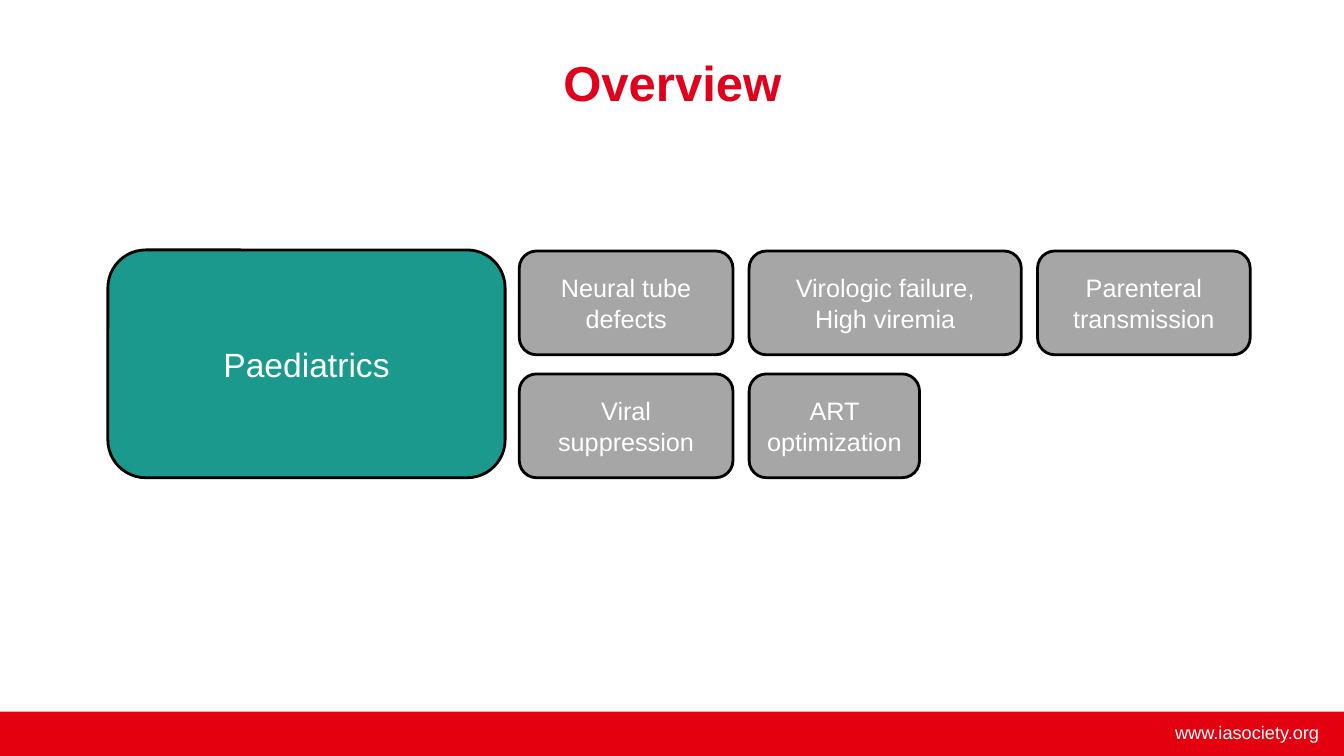
from pptx import Presentation
from pptx.dml.color import RGBColor
from pptx.enum.shapes import MSO_SHAPE
from pptx.enum.text import MSO_ANCHOR, PP_ALIGN
from pptx.util import Inches, Pt

RECT, ROUND = MSO_SHAPE.RECTANGLE, MSO_SHAPE.ROUNDED_RECTANGLE
TOP, MIDDLE = MSO_ANCHOR.TOP, MSO_ANCHOR.MIDDLE
CENTER, RIGHT = PP_ALIGN.CENTER, PP_ALIGN.RIGHT
WHITE, BLACK, BAR, RED = "FFFFFF", "000000", "E3000F", "E0001B"
TEAL, GREY = "1A998C", "A6A6A6"


def color(code):
    return RGBColor.from_string(code)


class Canvas:
    font = "Arial"

    def __init__(self, slide):
        self.slide = slide

    def label(self, shape, lines, size, ink=WHITE, bold=False,
              align=CENTER, anchor=MIDDLE):
        frame = shape.text_frame
        frame.word_wrap = True
        frame.vertical_anchor = anchor
        for i, line in enumerate(lines):
            para = frame.add_paragraph() if i else frame.paragraphs[0]
            para.alignment = align
            run = para.add_run()
            run.text = line
            run.font.name = self.font
            run.font.size = Pt(size)
            run.font.bold = bold
            run.font.color.rgb = color(ink)

    def text(self, box, line, size, **style):
        shape = self.slide.shapes.add_textbox(*map(Inches, box))
        self.label(shape, [line], size, **style)

    def block(self, kind, box, fill, edge=None):
        shape = self.slide.shapes.add_shape(kind, *map(Inches, box))
        shape.shadow.inherit = False
        shape.fill.solid()
        shape.fill.fore_color.rgb = color(fill)
        if edge:
            shape.line.color.rgb = color(edge)
            shape.line.width = Pt(2)
        else:
            shape.line.fill.background()
        return shape

    def card(self, box, fill, lines, size):
        self.label(self.block(ROUND, box, fill, BLACK), lines, size)


def main():
    deck = Presentation()
    deck.slide_width, deck.slide_height = Inches(13.33), Inches(7.5)
    page = Canvas(deck.slides.add_slide(deck.slide_layouts[6]))

    # Footer
    page.block(RECT, (0, 7.06, 13.33, 0.44), BAR)
    page.text((10.43, 7.11, 2.75, 0.32), "www.iasociety.org", 13,
              align=RIGHT, anchor=TOP)

    # Title
    page.text((1.67, 0, 10, 1.62), "Overview", 35, ink=RED, bold=True)

    # Main topic
    page.card((1.07, 2.48, 3.94, 2.26), TEAL, ["Paediatrics"], 24)

    # Subtopics, row by row
    left, top, high, gap, step = 5.15, 2.49, 1.03, 0.16, 1.22
    rows = [
        [(2.12, ["Neural tube defects"]),
         (2.7, ["Virologic failure,", "High viremia"]),
         (2.11, ["Parenteral transmission"])],
        [(2.12, ["Viral suppression"]),
         (1.69, ["ART optimization"])],
    ]
    for i, row in enumerate(rows):
        x = left
        for wide, lines in row:
            page.card((x, top + i * step, wide, high), GREY, lines, 18)
            x += wide + gap

    deck.save("out.pptx")


if __name__ == "__main__":
    main()
